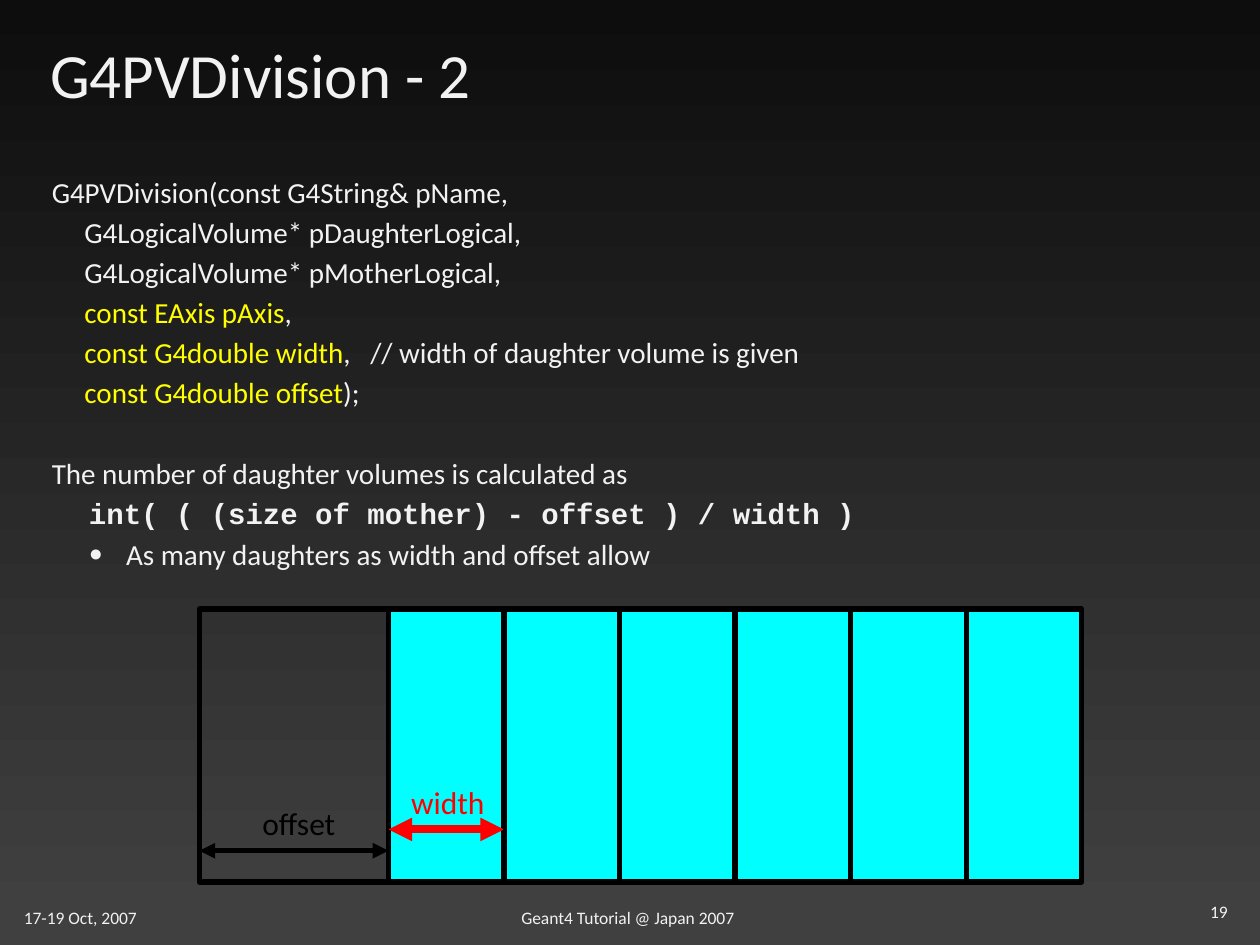
from lxml import etree
from pptx import Presentation
from pptx.dml.color import RGBColor
from pptx.enum.shapes import MSO_CONNECTOR, MSO_SHAPE
from pptx.enum.text import MSO_ANCHOR, MSO_AUTO_SIZE, PP_ALIGN
from pptx.oxml.ns import qn
from pptx.util import Cm, Pt

LEFT, CENTER, RIGHT = PP_ALIGN.LEFT, PP_ALIGN.CENTER, PP_ALIGN.RIGHT
RECTANGLE, STRAIGHT = MSO_SHAPE.RECTANGLE, MSO_CONNECTOR.STRAIGHT
MIDDLE, NO_AUTOFIT = MSO_ANCHOR.MIDDLE, MSO_AUTO_SIZE.NONE

LIGHT, YELLOW, BLACK, CYAN, RED = "F2F2F2", "FFFF00", "000000", "00FFFF", "FF0000"


def rgb(color):
    return RGBColor.from_string(color)


def style(run, size, color, font="Calibri", bold=False):
    run.font.name = font
    run.font.size = Pt(size)
    run.font.bold = bold
    run.font.color.rgb = rgb(color)


prs = Presentation()
prs.slide_width, prs.slide_height = Cm(25.4), Cm(19.05)
slide = prs.slides.add_slide(prs.slide_layouts[1])

backdrop = slide.background.fill
backdrop.gradient()
backdrop.gradient_angle = 90
for stop, (position, color) in zip(backdrop.gradient_stops, [(0.03, "404040"), (1, "0D0D0D")]):
    stop.position = position
    stop.color.rgb = rgb(color)

# Title
title = slide.shapes.title
title.left, title.top, title.width, title.height = Cm(0.76), Cm(0.56), Cm(22.86), Cm(1.83)
title.text_frame.text = "G4PVDivision - 2"
title.text_frame.vertical_anchor = MIDDLE
title.text_frame.auto_size = NO_AUTOFIT
title.text_frame.paragraphs[0].alignment = LEFT
style(title.text_frame.paragraphs[0].runs[0], 36, LIGHT)

# Constructor signature and explanation: (level, space before, bullet, font, runs)
indent = " " * 5
body_lines = [
    (0, 0, None, "Calibri", [("G4PVDivision(const G4String& pName,", LIGHT)]),
    (0, 3, None, "Calibri", [(indent + "G4LogicalVolume* pDaughterLogical,", LIGHT)]),
    (0, 3, None, "Calibri", [(indent + "G4LogicalVolume* pMotherLogical,", LIGHT)]),
    (0, 3, None, "Calibri", [(indent + "const EAxis pAxis", YELLOW), (",", LIGHT)]),
    (0, 3, None, "Calibri", [(indent + "const G4double width", YELLOW),
                             (",   // width of daughter volume is given", LIGHT)]),
    (0, 3, None, "Calibri", [(indent + "const G4double offset", YELLOW), (");", LIGHT)]),
    (0, 26.4, None, "Calibri", [("The number of daughter volumes is calculated as", LIGHT)]),
    (1, 3, None, "Courier New", [("int( ( (size of mother) - offset ) / width )", LIGHT)]),
    (1, 3, "●", "Calibri", [("As many daughters as width and offset allow", LIGHT)]),
]
body = slide.placeholders[1]
body.left, body.top, body.width, body.height = Cm(0.79), Cm(3.38), Cm(24.21), Cm(8.33)
body.text_frame.auto_size = NO_AUTOFIT
for number, (level, space, bullet, font, runs) in enumerate(body_lines):
    paragraph = body.text_frame.add_paragraph() if number else body.text_frame.paragraphs[0]
    properties = paragraph._p.get_or_add_pPr()
    margin, hanging = [(Cm(0.95), Cm(-0.95)), (Cm(1.5), Cm(-0.75))][level]
    properties.set("marL", str(margin))
    properties.set("indent", str(hanging))
    if bullet:
        etree.SubElement(properties, qn("a:buSzPct")).set("val", "80000")
        etree.SubElement(properties, qn("a:buChar")).set("char", bullet)
    else:
        etree.SubElement(properties, qn("a:buNone"))
    paragraph.level = level
    paragraph.space_before = Pt(space)
    for words, color in runs:
        run = paragraph.add_run()
        run.text = words
        style(run, 16.6, color, font, bold=font == "Courier New")

# Mother volume, divided into equal daughters after the offset
mother_left, mother_top, mother_height = 4.02, 12.28, 5.5
first_left, daughter_width, daughter_count = 7.83, 2.33, 6
volumes = [(mother_left, 16.51, None)]
volumes += [(first_left + i * daughter_width, daughter_width, CYAN) for i in range(daughter_count)]
for left, width, color in volumes:
    volume = slide.shapes.add_shape(RECTANGLE, Cm(left), Cm(mother_top), Cm(width), Cm(mother_height))
    volume.shadow.inherit = False
    if color:
        volume.fill.solid()
        volume.fill.fore_color.rgb = rgb(color)
    else:
        volume.fill.background()
    volume.line.color.rgb = rgb(BLACK)
    volume.line.width = Pt(3)

# Dimension arrows, then the edges they reach
second_left = first_left + daughter_width
mother_bottom = mother_top + mother_height
dimension_lines = [
    (mother_left, 17.15, first_left, 17.15, BLACK, 3, True),
    (first_left, 16.72, second_left, 16.72, RED, 4.5, True),
    (first_left, mother_bottom, first_left, mother_top, BLACK, 0.75, False),
    (second_left, mother_bottom, second_left, mother_top, BLACK, 0.75, False),
]
for x1, y1, x2, y2, color, weight, arrows in dimension_lines:
    dimension = slide.shapes.add_connector(STRAIGHT, Cm(x1), Cm(y1), Cm(x2), Cm(y2))
    dimension.line.color.rgb = rgb(color)
    dimension.line.width = Pt(weight)
    if arrows:
        outline = dimension.line._get_or_add_ln()
        for end in ("a:headEnd", "a:tailEnd"):
            etree.SubElement(outline, qn(end)).set("type", "triangle")
    etree.SubElement(dimension._element.spPr, qn("a:effectLst"))

# Dimension labels and footer
labels = [
    ("offset", 4.65, 16.09, 2.75, 1.02, 18, BLACK, CENTER, True),
    ("width", 8.04, 15.66, 2.12, 1.02, 18, RED, LEFT, True),
    ("17-19 Oct, 2007", 0.23, 18.16, 2.84, 0.69, 10, LIGHT, LEFT, False),
    ("Geant4 Tutorial @ Japan 2007", 10.26, 18.16, 4.9, 0.69, 10, LIGHT, LEFT, False),
    ("19", 19.08, 18.03, 5.92, 1.02, 10, LIGHT, RIGHT, True),
]
for words, left, top, width, height, size, color, alignment, wrap in labels:
    label = slide.shapes.add_textbox(Cm(left), Cm(top), Cm(width), Cm(height))
    label.text_frame.word_wrap = wrap
    label.text_frame.text = words
    label.text_frame.paragraphs[0].alignment = alignment
    style(label.text_frame.paragraphs[0].runs[0], size, color)

prs.save("out.pptx")
